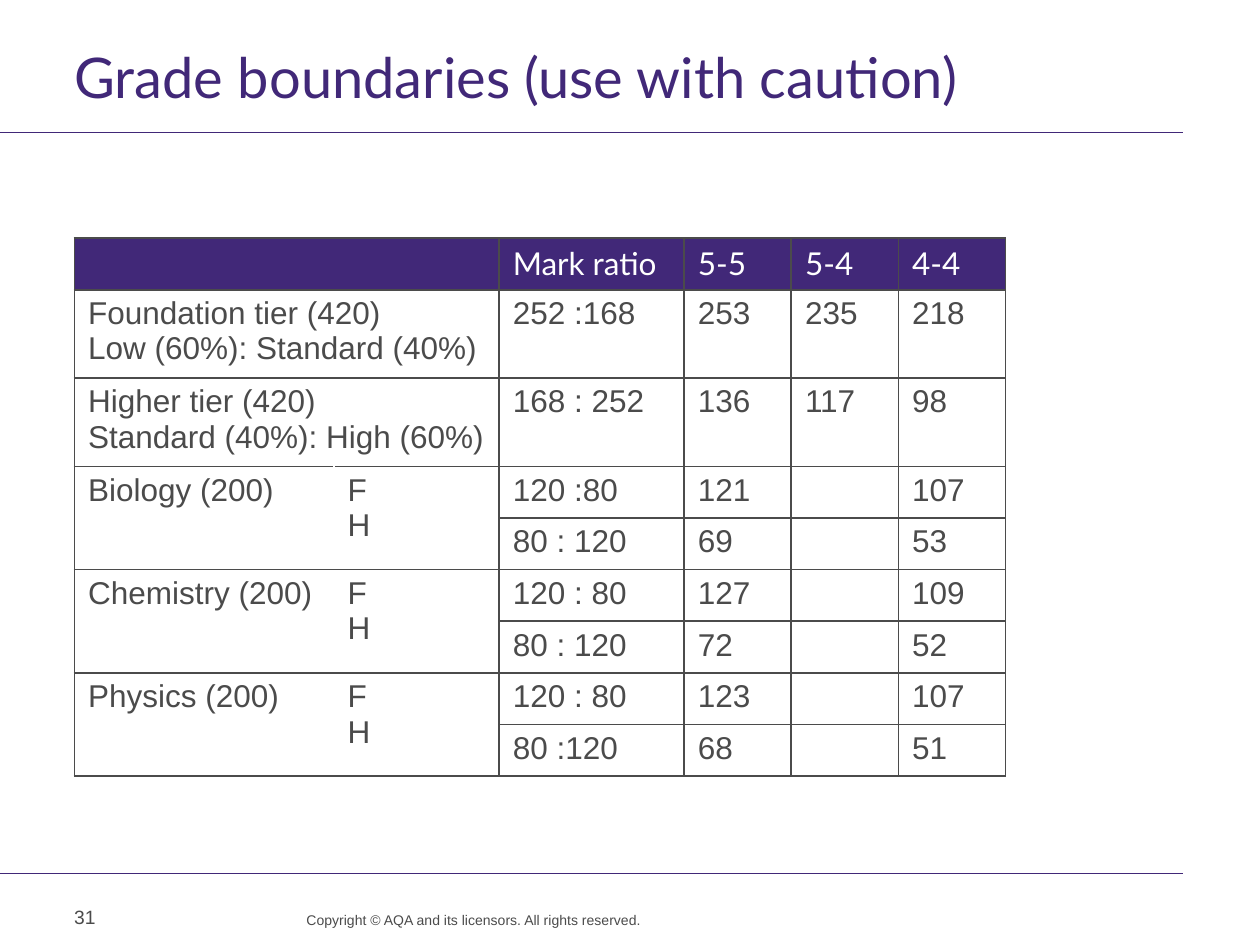
import pptx
import pptx.util
import pptx.dml.color
import pptx.enum.shapes
import pptx.enum.text
import pptx.oxml
import pptx.oxml.ns

PURPLE, GREY, WHITE = "412878", "4B4B4B", "FFFFFF"
W, H = 10, 7.5
LEFT, RIGHT = 0.59, 9.39

TITLE = "Grade boundaries (use with caution)"
COPYRIGHT = "Copyright © AQA and its licensors. All rights reserved."
PAGE = "31"
HEADER = ["Mark ratio", "5-5", "5-4", "4-4"]
TIERS = [
    (["Foundation tier (420)", "Low (60%): Standard (40%)"], ["252 :168", "253", "235", "218"]),
    (["Higher tier (420)", "Standard (40%): High (60%)"], ["168 : 252", "136", "117", "98"]),
]
SUBJECTS = [
    ("Biology (200)", ["120 :80", "121", "", "107"], ["80 : 120", "69", "", "53"]),
    ("Chemistry (200)", ["120 : 80", "127", "", "109"], ["80 : 120", "72", "", "52"]),
    ("Physics (200)", ["120 : 80", "123", "", "107"], ["80 :120", "68", "", "51"]),
]
COLS = [2.06, 1.31, 1.47, 0.85, 0.85, 0.85]
ROW = 0.41

inch, pt = pptx.util.Inches, pptx.util.Pt


def rgb(color):
    return pptx.dml.color.RGBColor.from_string(color)


def write(tf, lines, size, font, color, spacing=None, align=None):
    for i, line in enumerate(lines):
        p = tf.add_paragraph() if i else tf.paragraphs[0]
        if spacing:
            p.line_spacing = pt(spacing)
        if align is not None:
            p.alignment = align
        if not line:
            continue
        r = p.add_run()
        r.text = line
        r.font.size, r.font.name = pt(size), font
        r.font.color.rgb = rgb(color)


def add_text(s, box, text, size, font, color, insets, anchor="TOP", **para):
    tf = s.shapes.add_textbox(*map(inch, box)).text_frame
    tf.word_wrap = True
    tf.margin_left, tf.margin_top, tf.margin_right, tf.margin_bottom = map(inch, insets)
    tf.vertical_anchor = getattr(pptx.enum.text.MSO_ANCHOR, anchor)
    write(tf, [text], size, font, color, **para)


def add_rule(s, y):
    sp = s.shapes.add_connector(pptx.enum.shapes.MSO_CONNECTOR.STRAIGHT,
                                0, inch(y), inch(RIGHT), inch(y))
    sp.line.color.rgb = rgb(PURPLE)
    sp.line.width = pt(0.6)
    pptx.oxml.ns.qn("a:effectLst")
    sp._element.spPr.append(pptx.oxml.parse_xml(
        f"<a:effectLst {pptx.oxml.ns.nsdecls('a')}/>"))


def set_borders(cell, white_side):
    tcPr = cell._tc.get_or_add_tcPr()
    for side in "LRTB":
        color = WHITE if side == white_side else GREY
        tcPr.append(pptx.oxml.parse_xml(
            f'<a:ln{side} {pptx.oxml.ns.nsdecls("a")} w="{pt(1)}">'
            f'<a:solidFill><a:srgbClr val="{color}"/></a:solidFill></a:ln{side}>'))


def add_grades(s):
    rows = [[[], []] + [[t] for t in HEADER]]
    rows += [[name, []] + [[t] for t in values] for name, values in TIERS]
    for name, foundation, higher in SUBJECTS:
        rows.append([[name], ["F", "H"]] + [[t] for t in foundation])
        rows.append([[], []] + [[t] for t in higher])
    table = s.shapes.add_table(len(rows), len(COLS), inch(LEFT), inch(1.89),
                               inch(sum(COLS)), inch(ROW * len(rows))).table
    for column, width in zip(table.columns, COLS):
        column.width = inch(width)
    first_subject = 1 + len(TIERS)
    for i, row in enumerate(rows):
        table.rows[i].height = inch(ROW)
        font, color = ("Arial", GREY) if i else ("Lato", WHITE)
        for j, lines in enumerate(row):
            cell = table.cell(i, j)
            cell.margin_left = cell.margin_right = inch(0.11)
            cell.margin_top = cell.margin_bottom = inch(0.05)
            set_borders(cell, "RL"[j] if i >= first_subject and j < 2 else None)
            if i:
                cell.fill.background()
            else:
                cell.fill.solid()
                cell.fill.fore_color.rgb = rgb(PURPLE)
            write(cell.text_frame, lines, 18, font, color)
    for i in range(first_subject):
        table.cell(i, 0).merge(table.cell(i, 1))
    for i in range(first_subject, len(rows), 2):
        for j in range(2):
            table.cell(i, j).merge(table.cell(i + 1, j))


def main():
    prs = pptx.Presentation()
    prs.slide_width, prs.slide_height = inch(W), inch(H)
    s = prs.slides.add_slide(prs.slide_layouts[6])
    for y in (1.05, 6.93):
        add_rule(s, y)
    add_text(s, (LEFT, 0.48, RIGHT - LEFT, 0.47), TITLE, 32, "Lato", PURPLE,
             (0, 0, 0.1, 0), spacing=28)
    add_text(s, (2.16, 7.23, 2.93, 0.26), COPYRIGHT, 8, "Arial", GREY,
             (0, 0, 0, 0), spacing=10, align=pptx.enum.text.PP_ALIGN.RIGHT)
    add_grades(s)
    add_text(s, (0.49, 7.08, 0.76, 0.4), PAGE, 11, "Arial", GREY,
             (0.1, 0.05, 0.1, 0.05), anchor="MIDDLE")
    prs.save("out.pptx")


if __name__ == "__main__":
    main()
